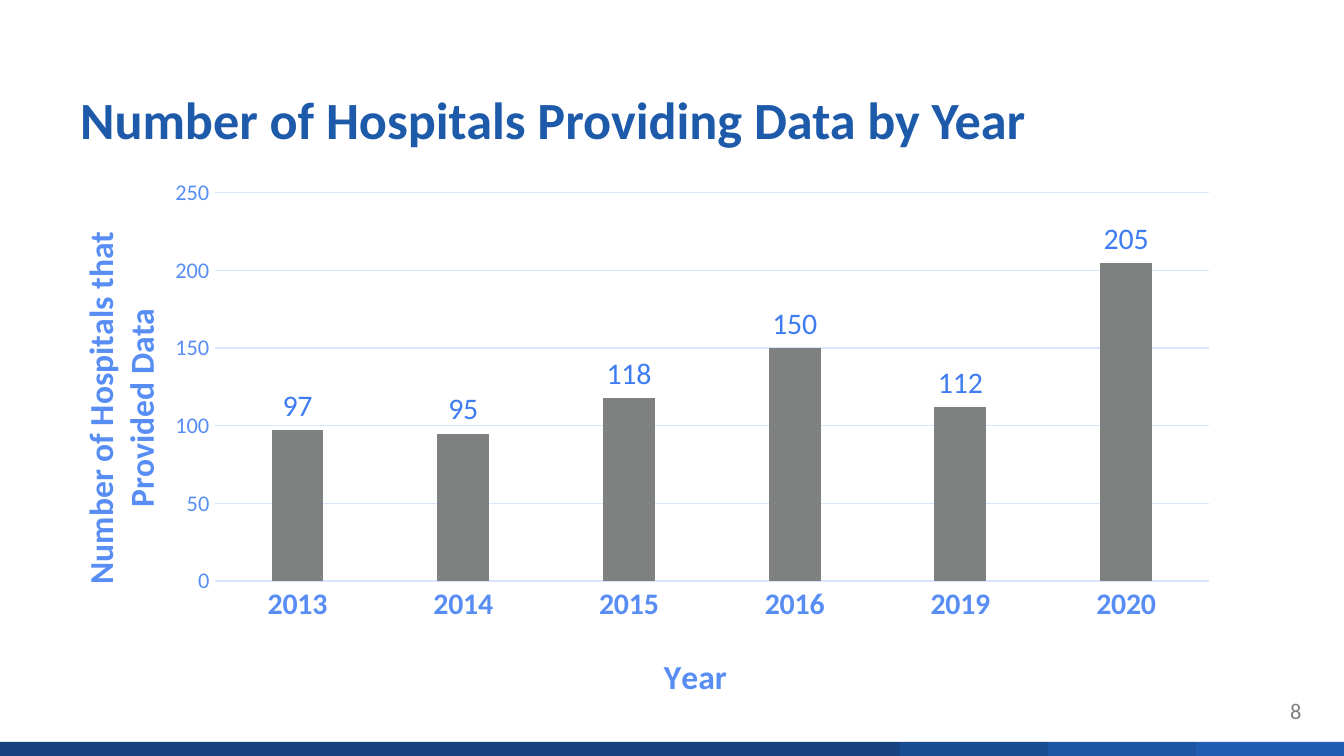
from lxml import etree
from pptx import Presentation
from pptx.chart.data import CategoryChartData
from pptx.dml.color import RGBColor
from pptx.enum.chart import XL_CHART_TYPE, XL_LABEL_POSITION, XL_TICK_MARK
from pptx.enum.shapes import MSO_SHAPE
from pptx.enum.text import MSO_ANCHOR
from pptx.oxml.ns import qn
from pptx.util import Pt

PX = 9144000 / 1344
FONT = "Calibri"
COLUMN = XL_CHART_TYPE.COLUMN_CLUSTERED
OUTSIDE = XL_LABEL_POSITION.OUTSIDE_END
NO_TICK = XL_TICK_MARK.NONE
RECT = MSO_SHAPE.RECTANGLE
TOP, BOTTOM = MSO_ANCHOR.TOP, MSO_ANCHOR.BOTTOM
COLORS = {
    "title": "1E5AAA", "number": "808080", "bar": "7F8080",
    "label": "3E7CF2", "axis": "588EF4", "grid": "D8E5FC",
    "band1": "164380", "band2": "194D93", "band3": "1C56A4", "band4": "1E5DB2",
}
YEARS = ["2013", "2014", "2015", "2016", "2019", "2020"]
HOSPITALS = [97, 95, 118, 150, 112, 205]


def emu(*lengths):
    """Turn px lengths into EMU."""
    return [round(n * PX) for n in lengths]


def rgb(name):
    """Look up a named colour."""
    return RGBColor.from_string(COLORS[name])


def style(font, size, color, bold=False):
    """Set the face, size, colour and weight of a font."""
    font.name, font.size, font.bold = FONT, Pt(size), bold
    font.color.rgb = rgb(color)


def add_text(s, box, text, size, color, bold=False, anchor=TOP, spacing=None):
    """Add a one-paragraph text box."""
    tf = s.shapes.add_textbox(*emu(*box)).text_frame
    tf.word_wrap = True
    tf.vertical_anchor = anchor
    p = tf.paragraphs[0]
    p.text = text
    p.line_spacing = spacing
    style(p.runs[0].font, size, color, bold)


def add_footer(s, box):
    """Draw the footer band: one long strip and three short ones."""
    x, y, w, h = box
    step = 148
    long = w - 3 * step
    for i in range(4):
        left = x + (long + (i - 1) * step if i else 0)
        sp = s.shapes.add_shape(RECT, *emu(left, y, step if i else long, h))
        sp.shadow.inherit = False
        sp.fill.solid()
        sp.fill.fore_color.rgb = rgb(f"band{i + 1}")
        sp.line.fill.background()


def set_layout(element, index, **fractions):
    """Place a chart part by fractions of the chart size."""
    for old in element.findall(qn("c:layout")):
        element.remove(old)
    layout = etree.Element(qn("c:layout"))
    manual = etree.SubElement(layout, qn("c:manualLayout"))
    values = {"xMode": "edge", "yMode": "edge", **fractions}
    if "w" in fractions:
        values = {"layoutTarget": "inner", **values}
    for tag, value in values.items():
        etree.SubElement(manual, qn(f"c:{tag}")).set("val", str(value))
    element.insert(index, layout)


def style_axis(axis, title, size, bold, x, y):
    """Format an axis and place its title."""
    axis.major_tick_mark = axis.minor_tick_mark = NO_TICK
    style(axis.tick_labels.font, size, "axis", bold)
    tf = axis.axis_title.text_frame
    tf.text = title
    style(tf.paragraphs[0].runs[0].font, 18, "axis", True)
    set_layout(axis.axis_title.element, 1, x=x, y=y)


def set_line(line):
    """Give a line the grid colour and width."""
    line.color.rgb = rgb("grid")
    line.width = Pt(0.75)


def add_hospital_chart(s, box):
    """Add the column chart of hospitals by year."""
    data = CategoryChartData()
    data.categories = YEARS
    data.add_series("Series 1", HOSPITALS)
    chart = s.shapes.add_chart(COLUMN, *emu(*box), data).chart
    chart.has_legend = chart.has_title = False
    style(chart.font, 10, "axis")

    plot = chart.plots[0]
    plot.gap_width, plot.overlap = 219, -27
    plot.vary_by_categories = False
    series = plot.series[0]
    series.format.fill.solid()
    series.format.fill.fore_color.rgb = rgb("bar")
    labels = series.data_labels
    labels.show_value = True
    labels.position = OUTSIDE
    style(labels.font, 16, "label")

    years, counts = chart.category_axis, chart.value_axis
    style_axis(years, "Year", 16, True, x=0.52, y=0.87)
    style_axis(counts, "Number of Hospitals that Provided Data", 12, False, x=0.03, y=0.1)
    set_line(years.format.line)
    counts.minimum_scale, counts.maximum_scale, counts.major_unit = 0, 250, 50
    counts.format.line.fill.background()
    set_line(counts.major_gridlines.format.line)

    area = chart.element.find(".//" + qn("c:plotArea"))
    set_layout(area, 0, x=0.15, y=0.04, w=0.83, h=0.71)


def build_slide(prs):
    """Build the hospital data slide."""
    s = prs.slides.add_slide(prs.slide_layouts[6])
    add_footer(s, (0, 742, 1344, 15))
    add_text(s, (1277, 691, 59, 40), "8", 12, "number")
    add_text(s, (67, 31, 1210, 126), "Number of Hospitals Providing Data by Year",
             28, "title", True, BOTTOM, Pt(30))
    add_hospital_chart(s, (35, 171, 1198, 547))


def main():
    """Create and save the presentation."""
    prs = Presentation()
    prs.slide_width, prs.slide_height = emu(1344, 756)
    build_slide(prs)
    prs.save("out.pptx")


if __name__ == "__main__":
    main()
